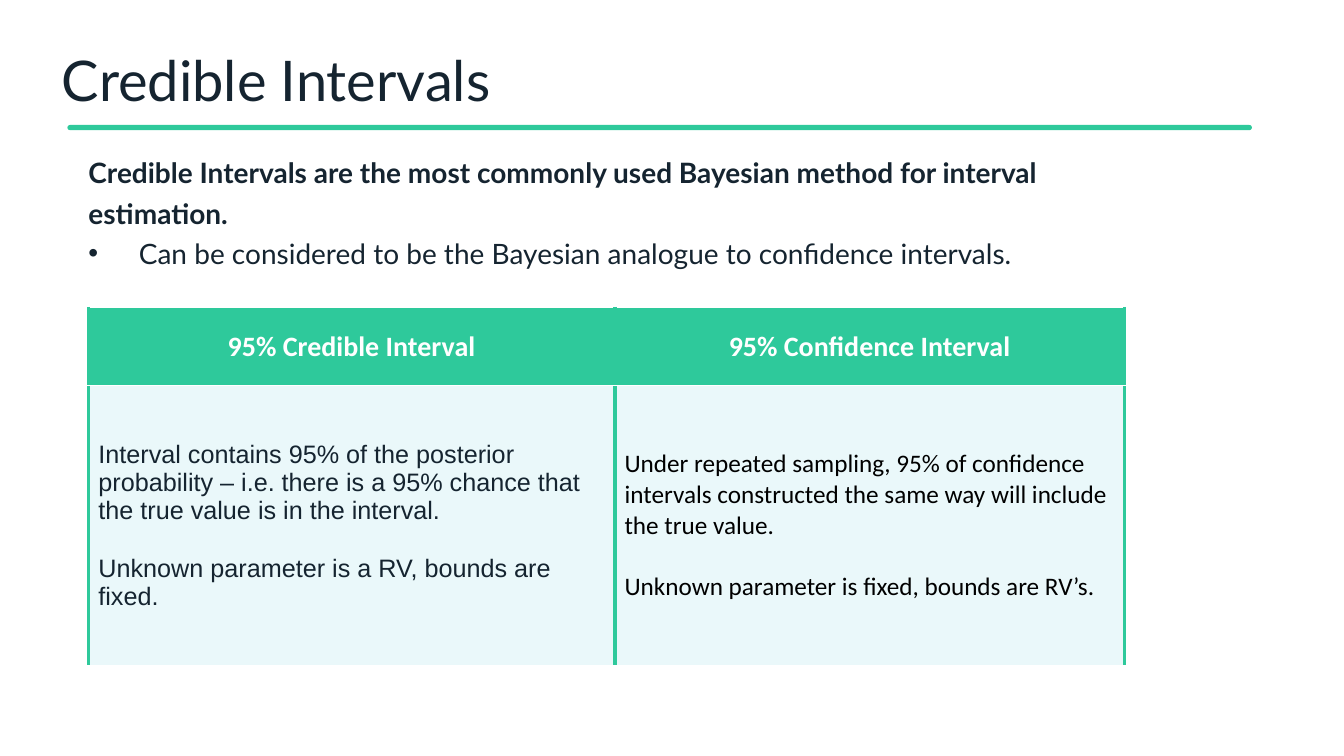
from lxml import etree
from pptx import Presentation
from pptx.dml.color import RGBColor
from pptx.enum.shapes import MSO_SHAPE as Shape
from pptx.enum.text import MSO_ANCHOR as Anchor, PP_ALIGN as Align
from pptx.oxml.ns import qn
from pptx.util import Cm, Pt

COLORS = {"green": "2EC99B", "ink": "152430", "ice": "D6F2F6",
          "white": "FFFFFF", "black": "000000"}
HEADERS = ["95% Credible Interval", "95% Confidence Interval"]
CREDIBLE = ["Interval contains 95% of the posterior probability – i.e. there is a "
            "95% chance that the true value is in the interval.",
            "Unknown parameter is a RV, bounds are fixed."]
CONFIDENCE = ["Under repeated sampling, 95% of confidence intervals constructed "
              "the same way will include the true value.",
              "Unknown parameter is fixed, bounds are RV’s."]


def color(name):
    """Return the named colour."""
    return RGBColor.from_string(COLORS[name])


def write(paragraph, text, font="Lato", size=20, ink="ink", bold=False,
          align=Align.LEFT, spacing=1.0, before=0):
    """Write formatted text into a paragraph."""
    paragraph.alignment = align
    paragraph.line_spacing = spacing
    paragraph.space_before = Pt(before)
    run = paragraph.add_run()
    run.text = text
    run.font.name = font
    run.font.size = Pt(size)
    run.font.bold = bold
    run.font.color.rgb = color(ink)


def add_bullet(paragraph, indent):
    """Give a paragraph a hanging bullet."""
    properties = paragraph._p.get_or_add_pPr()
    properties.set("marL", str(indent))
    properties.set("indent", str(-indent))
    bullet_font = etree.SubElement(properties, qn("a:buFont"))
    bullet_font.set("typeface", "Arial")
    etree.SubElement(properties, qn("a:buChar")).set("char", "•")


def add_text_frame(slide, left, top, width, height, margin=0, anchor=Anchor.TOP):
    """Add a wrapping text box and return its frame."""
    frame = slide.shapes.add_textbox(left, top, width, height).text_frame
    frame.word_wrap = True
    frame.vertical_anchor = anchor
    frame.margin_left = frame.margin_right = margin
    frame.margin_top = frame.margin_bottom = margin
    return frame


def add_rule(slide):
    """Add the rounded green rule under the title."""
    rule = slide.shapes.add_shape(Shape.ROUNDED_RECTANGLE, Cm(1.7), Cm(3.15),
                                  Cm(29.85), Cm(0.13))
    rule.adjustments[0] = 0.5
    rule.shadow.inherit = False
    rule.fill.solid()
    rule.fill.fore_color.rgb = color("green")
    rule.line.fill.background()


def style_cell(cell, fill, opacity=100):
    """Set fill, margins and borders of a cell."""
    cell.fill.solid()
    cell.fill.fore_color.rgb = color(fill)
    cell.vertical_anchor = Anchor.MIDDLE
    cell.margin_left = cell.margin_right = Cm(0.25)
    cell.margin_top = cell.margin_bottom = Cm(0.25)
    properties = cell._tc.get_or_add_tcPr()
    if opacity < 100:
        tint = properties.find(".//" + qn("a:srgbClr"))
        etree.SubElement(tint, qn("a:alpha")).set("val", str(opacity * 1000))
    borders = [("L", "green", 3), ("R", "green", 3), ("T", "white", 1), ("B", "white", 1)]
    for position, (side, ink, width) in enumerate(borders):
        border = etree.Element(qn(f"a:ln{side}"), w=str(Pt(width)))
        solid = etree.SubElement(border, qn("a:solidFill"))
        etree.SubElement(solid, qn("a:srgbClr")).set("val", COLORS[ink])
        properties.insert(position, border)


def add_comparison(slide):
    """Add the table that compares the two intervals."""
    table = slide.shapes.add_table(2, 2, Cm(2.23), Cm(7.75), Cm(26.11), Cm(9.02)).table
    table.horz_banding = False
    for column, width in zip(table.columns, (13.26, 12.85)):
        column.width = Cm(width)
    for row, height in zip(table.rows, (1.96, 7.06)):
        row.height = Cm(height)
    bodies = [(CREDIBLE, "Arial", "ink", 21), (CONFIDENCE, "Calibri", "black", 22)]
    for index, (header, (texts, font, ink, gap)) in enumerate(zip(HEADERS, bodies)):
        heading = table.cell(0, index)
        style_cell(heading, "green")
        write(heading.text_frame.paragraphs[0], header, font="Calibri",
              ink="white", bold=True, align=Align.CENTER)
        body = table.cell(1, index)
        style_cell(body, "ice", opacity=49)
        frame = body.text_frame
        write(frame.paragraphs[0], texts[0], font=font, size=18, ink=ink)
        write(frame.add_paragraph(), texts[1], font=font, size=18, ink=ink, before=gap)


def main():
    """Build and save the slide."""
    presentation = Presentation()
    presentation.slide_width, presentation.slide_height = Cm(33.87), Cm(19.05)
    slide = presentation.slides.add_slide(presentation.slide_layouts[6])
    add_rule(slide)
    title = add_text_frame(slide, Cm(1.48), Cm(0.97), Cm(30.89), Cm(1.98),
                           margin=Cm(0.08), anchor=Anchor.BOTTOM)
    write(title.paragraphs[0], "Credible Intervals", size=40, spacing=0.9)
    intro = add_text_frame(slide, Cm(2.23), Cm(3.76), Cm(26.37), Cm(3.99))
    write(intro.paragraphs[0], "Credible Intervals are the most commonly used Bayesian "
          "method for interval estimation.", bold=True, spacing=1.2)
    bullet = intro.add_paragraph()
    write(bullet, "Can be considered to be the Bayesian analogue to confidence intervals.",
          spacing=1.2)
    add_bullet(bullet, Cm(1.27))
    add_comparison(slide)
    presentation.save("out.pptx")


if __name__ == "__main__":
    main()
